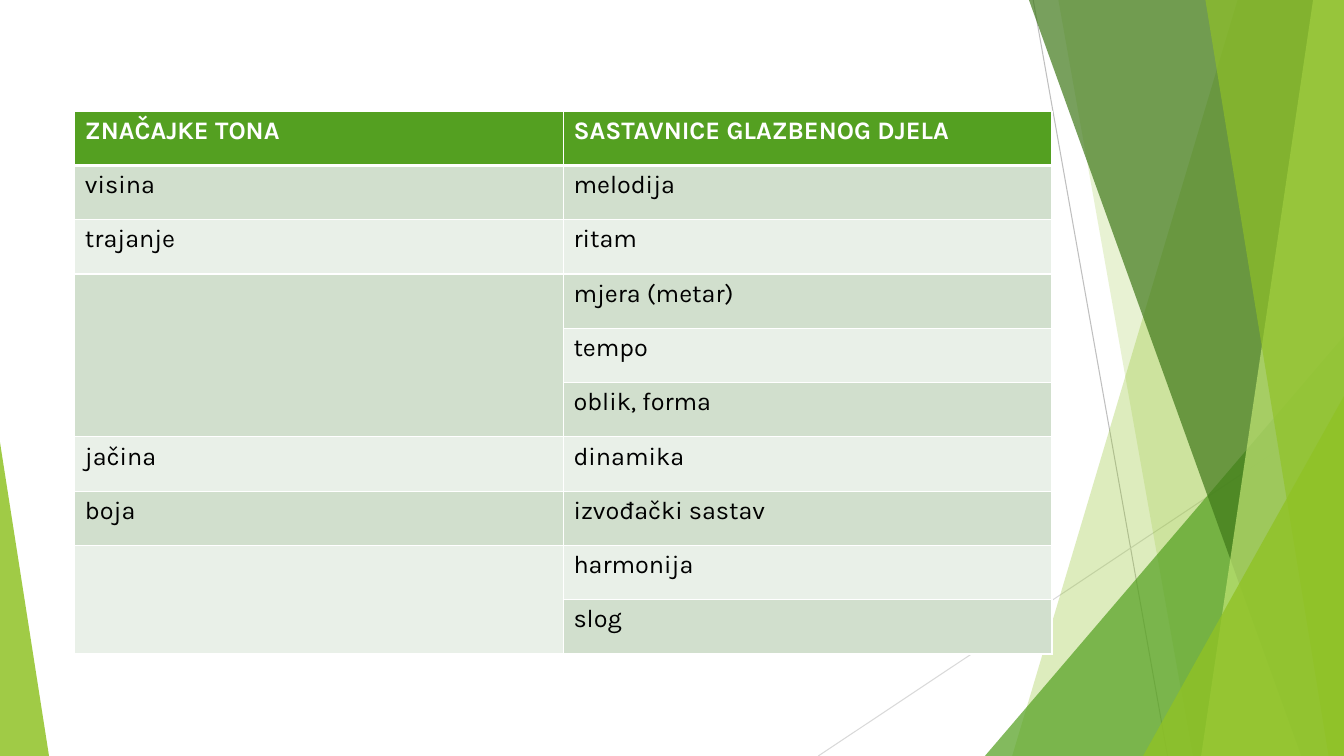
from dataclasses import dataclass

from lxml import etree
from pptx import Presentation, util as u
from pptx.dml.color import RGBColor
from pptx.enum import shapes
from pptx.oxml.ns import qn


@dataclass(frozen=True)
class Theme:
    font: str = "Karla"
    text_size: int = 18
    header: str = "54A021"
    bands: tuple = ("E9F0E8", "D1DFCD")
    white: str = "FFFFFF"
    black: str = "000000"
    leaf: str = "90C226"
    grass: str = "54A021"
    forest: str = "3F7819"
    lime: str = "C0E474"
    ray: str = "BFBFBF"
    pale_ray: str = "D9D9D9"


THEME = Theme()
WIDTH, HEIGHT = 960, 540
TABLE_LEFT, TABLE_TOP = 53.5, 79.4
COLUMN_WIDTH, ROW_HEIGHT = 349, 38.8

ROWS = [
    ("ZNAČAJKE TONA", "SASTAVNICE GLAZBENOG DJELA"),
    ("visina", "melodija"),
    ("trajanje", "ritam"),
    ("", "mjera (metar)"),
    ("", "tempo"),
    ("", "oblik, forma"),
    ("jačina", "dinamika"),
    ("boja", "izvođački sastav"),
    ("", "harmonija"),
    ("", "slog"),
]
EMPTY_SPANS = [(3, 5), (8, 9)]


def rgb(color):
    return RGBColor.from_string(color)


def paint(shape, color, opacity):
    """Give a shape a see-through fill, without line or shadow."""
    shape.shadow.inherit = False
    shape.line.fill.background()
    shape.fill.solid()
    shape.fill.fore_color.rgb = rgb(color)
    tint = shape.fill._xPr.find(qn("a:solidFill"))[0]
    etree.SubElement(tint, qn("a:alpha"), val=str(opacity * 1000))


def add_ray(page, start, end, color):
    ends = [u.Pt(value) for value in (*start, *end)]
    ray = page.shapes.add_connector(shapes.MSO_CONNECTOR.STRAIGHT, *ends)
    ray.line.color.rgb = rgb(color)
    ray.line.width = u.Pt(0.75)
    etree.SubElement(ray._element.spPr, qn("a:effectLst"))


def add_blade(page, top_x, bottom_x, color, opacity):
    """Fill from a slanted left edge to the right side of the slide."""
    corners = [(WIDTH, 0), (WIDTH, HEIGHT), (bottom_x, HEIGHT)]
    outline = page.shapes.build_freeform(u.Pt(top_x), 0)
    outline.add_line_segments([(u.Pt(x), u.Pt(y)) for x, y in corners])
    paint(outline.convert_to_shape(), color, opacity)


def add_corner(page, left, top, width, peak, color, opacity):
    """Place a triangle on the bottom edge of the slide."""
    place = [u.Pt(value) for value in (left, top, width, HEIGHT - top)]
    corner = page.shapes.add_shape(shapes.MSO_SHAPE.ISOSCELES_TRIANGLE, *place)
    corner.adjustments[0] = peak
    paint(corner, color, opacity)


def add_backdrop(page):
    add_ray(page, (738, 0), (834, HEIGHT), THEME.ray)
    add_ray(page, (WIDTH, 290), (584.5, HEIGHT), THEME.pale_ray)
    add_blade(page, 884, 723, THEME.leaf, 30)
    add_blade(page, 756, 852, THEME.leaf, 20)
    add_corner(page, 703.5, 240, 256.5, 1, THEME.grass, 72)
    add_blade(page, 735, 929.5, THEME.forest, 70)
    add_blade(page, 938, 858, THEME.lime, 70)
    add_blade(page, 861, 949, THEME.leaf, 65)
    add_corner(page, 816.5, 283, 143.5, 1, THEME.leaf, 80)
    add_corner(page, 0, 316, 35, 0, THEME.leaf, 85)


def set_borders(cell, widths):
    properties = cell._tc.get_or_add_tcPr()
    for side, width in widths.items():
        border = etree.SubElement(properties, qn(f"a:ln{side}"), w=str(u.Pt(width)))
        fill = etree.SubElement(border, qn("a:solidFill"))
        etree.SubElement(fill, qn("a:srgbClr"), val=THEME.white)


def write_cell(cell, text, row):
    is_header = row == 0
    set_borders(cell, {"L": 1, "R": 1, "T": 3 if row == 1 else 1, "B": 3 if is_header else 1})
    cell.fill.solid()
    cell.fill.fore_color.rgb = rgb(THEME.header if is_header else THEME.bands[row % 2])
    if not text:
        return
    span = cell.text_frame.paragraphs[0].add_run()
    span.text = text
    formats = {"name": THEME.font, "size": u.Pt(THEME.text_size), "bold": is_header}
    for name, value in formats.items():
        setattr(span.font, name, value)
    span.font.color.rgb = rgb(THEME.white if is_header else THEME.black)


def add_tone_table(page):
    size = (2 * COLUMN_WIDTH, len(ROWS) * ROW_HEIGHT)
    place = [u.Pt(value) for value in (TABLE_LEFT, TABLE_TOP, *size)]
    table = page.shapes.add_table(len(ROWS), 2, *place).table
    for row, texts in enumerate(ROWS):
        for column, text in enumerate(texts):
            write_cell(table.cell(row, column), text, row)
    for first, last in EMPTY_SPANS:
        table.cell(first, 0).merge(table.cell(last, 0))


def main():
    deck = Presentation()
    deck.slide_width, deck.slide_height = u.Pt(WIDTH), u.Pt(HEIGHT)
    page = deck.slides.add_slide(deck.slide_layouts[6])
    add_backdrop(page)
    add_tone_table(page)
    deck.save("out.pptx")


if __name__ == "__main__":
    main()
